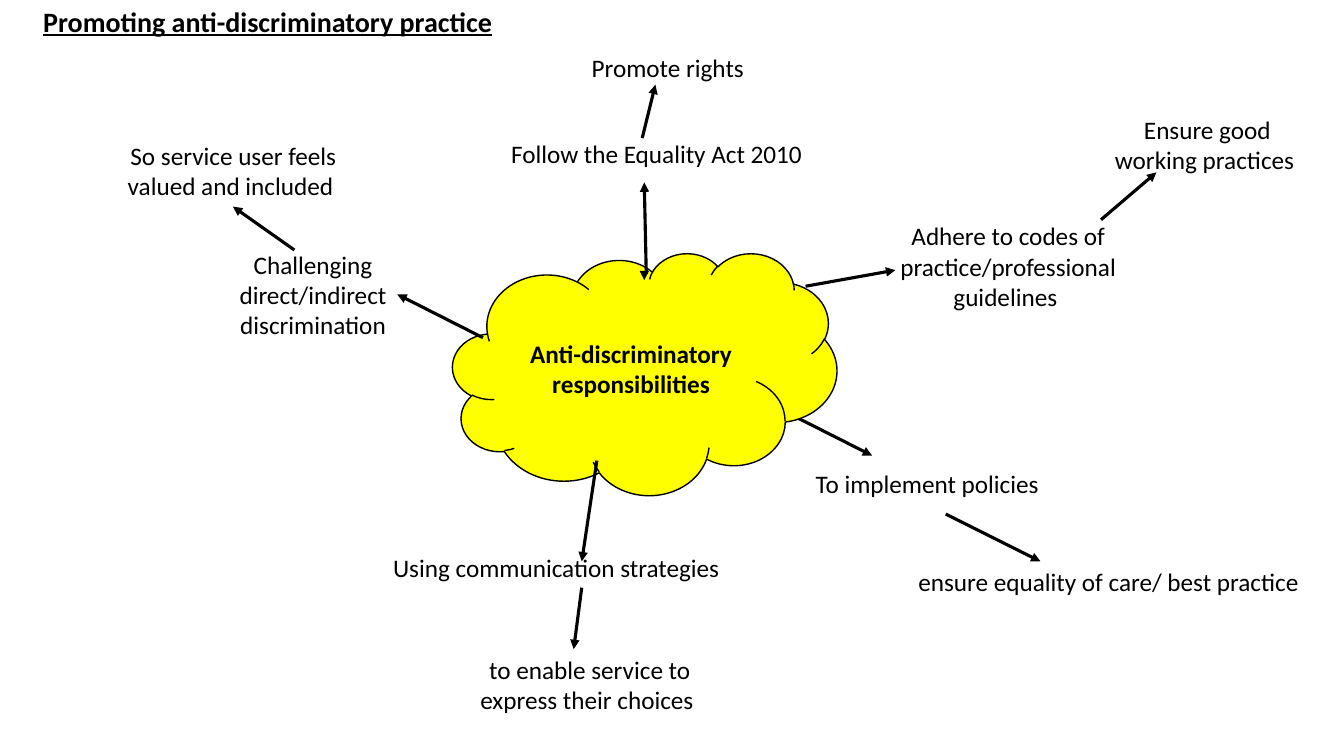
from lxml import etree
from pptx import Presentation
from pptx.dml.color import RGBColor
from pptx.enum import shapes, text
from pptx.oxml import ns
from pptx.util import Inches, Pt

BLACK = RGBColor(0, 0, 0)
YELLOW = RGBColor(255, 255, 0)
FONT = "Calibri"

LABELS = [
    ("To implement policies", 7.99, 4.6, 2.52, 0.4, False),
    ("ensure equality of care/ best practice", 9.01, 5.57, 4.1, 0.4, False),
    ("Adhere to codes of practice/professional guidelines ", 8.65, 2.14, 2.7, 1.01, True),
    ("Ensure good working practices ", 10.92, 1.08, 2.11, 0.71, True),
    ("Using communication strategies", 3.8, 5.43, 3.55, 0.4, False),
    ("to enable service to express their choices ", 4.42, 6.44, 2.86, 0.71, True),
    ("Follow the Equality Act 2010", 4.97, 1.32, 3.19, 0.4, False),
    ("Promote rights", 5.77, 0.47, 1.74, 0.4, False),
    ("Challenging direct/indirect discrimination", 1.72, 2.42, 2.77, 1.01, True),
    ("So service user feels valued and included ", 0.9, 1.34, 2.83, 0.71, True),
]

BEHIND = (7.7, 4.04, 8.65, 4.52)
ARROWS = [
    (9.38, 5.1, 10.32, 5.57),
    (7.99, 2.84, 8.88, 2.68),
    (10.92, 2.18, 11.47, 1.71),
    (5.92, 4.57, 5.77, 5.57),
    (5.77, 5.83, 5.69, 6.44),
    (6.39, 2.76, 6.39, 2.78),
    (6.37, 1.37, 6.5, 0.84),
    (4.79, 3.35, 3.94, 2.92),
    (2.92, 2.48, 2.31, 2.05),
    (6.41, 2.72, 6.39, 1.81),
]


def style(para, size=18, bold=False, center=True):
    para.alignment = text.PP_ALIGN.CENTER if center else text.PP_ALIGN.LEFT
    font = para.font
    font.name = FONT
    font.size = Pt(size)
    font.bold = bold
    font.color.rgb = BLACK


def add_title(slide, words):
    title = slide.shapes.title
    title.left, title.top = Inches(-0.61), Inches(0.03)
    title.width, title.height = Inches(6.53), Inches(0.4)
    frame = title.text_frame
    frame.text = words
    frame.word_wrap = True
    frame.auto_size = text.MSO_AUTO_SIZE.SHAPE_TO_FIT_TEXT
    frame.vertical_anchor = text.MSO_ANCHOR.MIDDLE
    para = frame.paragraphs[0]
    style(para, 20, True)
    para.font.underline = True
    para.line_spacing = 0.9


def add_cloud(slide, words):
    cloud = slide.shapes.add_shape(
        shapes.MSO_SHAPE.CLOUD, Inches(4.49), Inches(2.51), Inches(3.81), Inches(2.4))
    cloud.shadow.inherit = False
    cloud.fill.solid()
    cloud.fill.fore_color.rgb = YELLOW
    cloud.line.color.rgb = BLACK
    cloud.line.width = Pt(1)
    frame = cloud.text_frame
    frame.text = words
    frame.word_wrap = True
    frame.vertical_anchor = text.MSO_ANCHOR.MIDDLE
    style(frame.paragraphs[0], bold=True)


def add_label(slide, words, left, top, width, height, wrap):
    box = slide.shapes.add_textbox(*map(Inches, (left, top, width, height)))
    frame = box.text_frame
    frame.text = words
    frame.word_wrap = wrap
    frame.auto_size = text.MSO_AUTO_SIZE.SHAPE_TO_FIT_TEXT
    style(frame.paragraphs[0], center=wrap)


def add_arrow(slide, ends):
    arrow = slide.shapes.add_connector(
        shapes.MSO_CONNECTOR.STRAIGHT, *map(Inches, ends))
    arrow.line.color.rgb = BLACK
    arrow.line.width = Pt(2.25)
    line = arrow.line._get_or_add_ln()
    etree.SubElement(line, ns.qn("a:tailEnd"), type="triangle")
    etree.SubElement(arrow._element.spPr, ns.qn("a:effectLst"))


def main():
    deck = Presentation()
    deck.slide_width, deck.slide_height = Inches(13.33), Inches(7.5)
    slide = deck.slides.add_slide(deck.slide_layouts[5])
    add_title(slide, "Promoting anti-discriminatory practice")
    add_arrow(slide, BEHIND)
    add_cloud(slide, "Anti-discriminatory responsibilities")
    for label in LABELS:
        add_label(slide, *label)
    for ends in ARROWS:
        add_arrow(slide, ends)
    deck.save("out.pptx")


if __name__ == "__main__":
    main()
